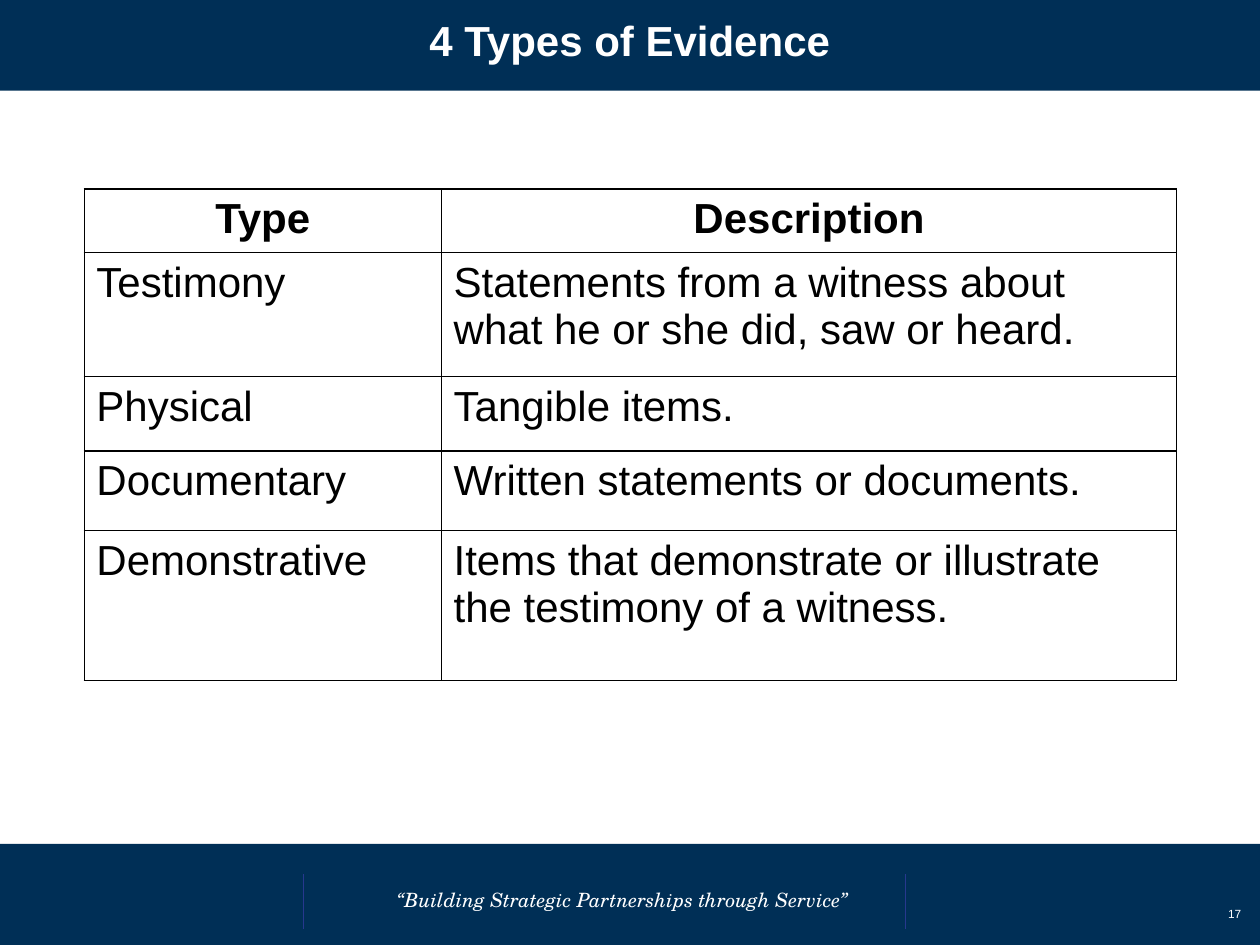
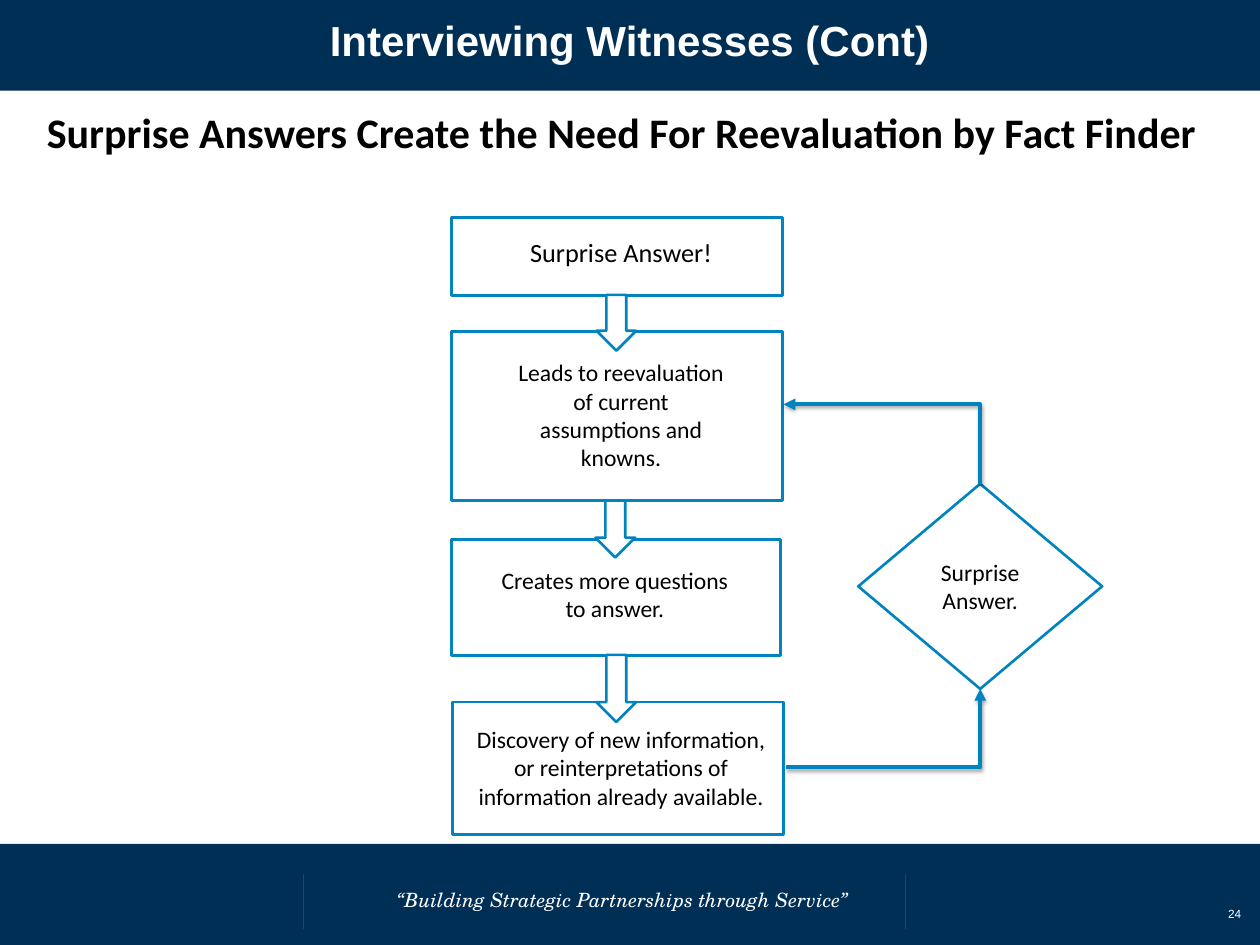
from dataclasses import dataclass

from lxml import etree
from pptx import Presentation
from pptx.dml.color import RGBColor
from pptx.enum import shapes, text
from pptx.oxml import ns
from pptx.util import Inches, Pt

KIND = shapes.MSO_SHAPE
LEFT, CENTER, RIGHT = (text.PP_ALIGN.LEFT, text.PP_ALIGN.CENTER,
                       text.PP_ALIGN.RIGHT)
TOP, MIDDLE = text.MSO_ANCHOR.TOP, text.MSO_ANCHOR.MIDDLE


@dataclass(frozen=True)
class Theme:
    navy: str = "002F56"
    rule: str = "27388E"
    blue: str = "0083BE"
    white: str = "FFFFFF"
    black: str = "000000"
    sans: str = "Arial"
    body: str = "Calibri"
    serif: str = "TeX Gyre Schola"
    head: int = 32
    lead: int = 20
    note: int = 18
    motto: int = 15
    tiny: int = 9


def rgb(code):
    return RGBColor.from_string(code)


def sub(parent, tag, **attrs):
    node = etree.SubElement(parent, ns.qn(tag))
    for key, value in attrs.items():
        node.set(key, str(value))
    return node


class Deck:
    """Holds the theme, the presentation and the current slide."""

    def __init__(self, theme):
        self.theme = theme
        self.prs = Presentation()
        self.prs.slide_width, self.prs.slide_height = Inches(13.33), Inches(10)
        self.slide = None

    def page(self, title, number):
        """Start a slide with its bands, title, motto and number."""
        t = self.theme
        self.slide = self.prs.slides.add_slide(self.prs.slide_layouts[6])
        self.shape(KIND.RECTANGLE, (0, 8.93, 13.33, 1.07), t.navy)
        for x in (9.58, 3.21):
            self.line((x, 9.25), (x, 9.83), t.rule, 0.75)
        self.text((4.1, 9.35, 5.2, 0.35),
                  "“Building Strategic Partnerships through Service”",
                  t.motto, t.serif, t.white, LEFT, italic=True)
        band = (0, -0.11, 13.33, 1.07)
        self.shape(KIND.RECTANGLE, band, t.navy)
        self.text(band, title, t.head, t.sans, t.white, bold=True,
                  anchor=MIDDLE)
        self.text((12.67, 9.41, 0.56, 0.53), str(number), t.tiny, t.sans,
                  t.white, RIGHT, anchor=MIDDLE)

    def label(self, frame, words, size, font=None, color=None, align=CENTER,
              bold=False, italic=False):
        frame.word_wrap = True
        par = frame.paragraphs[0]
        par.text, par.alignment = words, align
        face = par.font
        face.size, face.bold, face.italic = Pt(size), bold, italic
        face.name = font or self.theme.body
        face.color.rgb = rgb(color or self.theme.black)

    def text(self, box, words, size, *args, anchor=TOP, **style):
        frame = self.slide.shapes.add_textbox(*map(Inches, box)).text_frame
        frame.vertical_anchor = anchor
        self.label(frame, words, size, *args, **style)

    def shape(self, kind, box, fill, line=None):
        item = self.slide.shapes.add_shape(kind, *map(Inches, box))
        item.shadow.inherit = False
        item.fill.solid()
        item.fill.fore_color.rgb = rgb(fill)
        if line:
            item.line.color.rgb = rgb(line)
            item.line.width = Pt(2)
        else:
            item.line.fill.background()
        return item

    def node(self, kind, box):
        """Add a white flowchart shape with a blue outline."""
        return self.shape(kind, box, self.theme.white, self.theme.blue)

    def line(self, start, end, color, width,
             kind=shapes.MSO_CONNECTOR.STRAIGHT):
        item = self.slide.shapes.add_connector(
            kind, *map(Inches, (*start, *end)))
        item.line.color.rgb = rgb(color)
        item.line.width = Pt(width)
        sub(item._element.spPr, "a:effectLst")
        return item

    def elbow(self, start, end, rise=False):
        """Draw a one-bend arrow; with rise it goes up first, then left."""
        if rise:
            (x1, y1), (x2, y2) = start, end
            wide, high = x1 - x2, y1 - y2
            x, y = (x1 + x2) / 2, (y1 + y2) / 2
            start = x - high / 2, y + wide / 2
            end = x + high / 2, y - wide / 2
        item = self.line(start, end, self.theme.blue, 3,
                         shapes.MSO_CONNECTOR.ELBOW)
        props = item._element.spPr
        props.find(ns.qn("a:prstGeom")).set("prst", "bentConnector2")
        if rise:
            props.find(ns.qn("a:xfrm")).set("rot", str(270 * 60000))
        sub(props.find(ns.qn("a:ln")), "a:tailEnd", type="triangle")
        glow = sub(props.find(ns.qn("a:effectLst")), "a:outerShdw",
                   blurRad=Pt(3.1), dist=Pt(1.8), dir=90 * 60000,
                   rotWithShape=0)
        sub(sub(glow, "a:srgbClr", val=self.theme.black), "a:alpha", val=35000)

    def table(self, spot, cols, rows, data):
        t = self.theme
        size = sum(cols), sum(rows)
        grid = self.slide.shapes.add_table(
            len(rows), len(cols), *map(Inches, (*spot, *size))).table
        for col, wide in zip(grid.columns, cols):
            col.width = Inches(wide)
        for i, (row, high) in enumerate(zip(grid.rows, rows)):
            row.height = Inches(high)
            for cell, words in zip(row.cells, data[i]):
                cell.margin_left = cell.margin_right = Inches(0.13)
                cell.margin_top = cell.margin_bottom = Inches(0.07)
                for side in "LRTB":
                    edge = sub(cell._tc.get_or_add_tcPr(), f"a:ln{side}",
                               w=Pt(1))
                    sub(sub(edge, "a:solidFill"), "a:srgbClr", val=t.black)
                cell.fill.solid()
                cell.fill.fore_color.rgb = rgb(t.white)
                self.label(cell.text_frame, words, t.head, t.sans,
                           align=LEFT if i else CENTER, bold=i == 0)


def evidence(deck):
    deck.page("4 Types of Evidence", 17)
    deck.table((0.89, 2), (3.78, 7.78), (0.67, 1.31, 0.79, 0.84, 1.59), [
        ("Type", "Description"),
        ("Testimony", "Statements from a witness about what he or she did, "
                      "saw or heard."),
        ("Physical", "Tangible items."),
        ("Documentary", "Written statements or documents."),
        ("Demonstrative", "Items that demonstrate or illustrate the "
                          "testimony of a witness."),
    ])


def witness(deck):
    t = deck.theme
    deck.page("Interviewing Witnesses (Cont)", 24)
    deck.text((0.05, 1.08, 13.06, 0.64),
              "Surprise Answers Create the Need For Reevaluation by Fact "
              "Finder", t.head, bold=True)
    # Back to front: the second step covers the tail of the arrow below it.
    for kind, box in (
            (KIND.RECTANGLE, (4.78, 5.71, 3.48, 1.23)),
            (KIND.DOWN_ARROW, (6.3, 5.27, 0.42, 0.63)),
            (KIND.RECTANGLE, (4.79, 7.43, 3.5, 1.4)),
            (KIND.RECTANGLE, (4.78, 3.51, 3.5, 1.79)),
            (KIND.RECTANGLE, (4.78, 2.3, 3.5, 0.83)),
            (KIND.DOWN_ARROW, (6.31, 3.12, 0.42, 0.59)),
            (KIND.DOWN_ARROW, (6.31, 6.93, 0.42, 0.71))):
        deck.node(kind, box)
    for box, words, size in (
            ((4.86, 2.45, 3.42, 0.44), "Surprise Answer!", t.lead),
            ((5.36, 3.74, 2.42, 1.31),
             "Leads to reevaluation of current assumptions and knowns.",
             t.note),
            ((5.17, 5.94, 2.67, 0.71), "Creates more questions to answer.",
             t.note),
            ((4.82, 7.62, 3.5, 1.01),
             "Discovery of new information, or reinterpretations of "
             "information already available.", t.note)):
        deck.text(box, words, size)
    deck.elbow((8.32, 8.12), (10.37, 7.29))
    choice = deck.node(KIND.DIAMOND, (9.08, 5.12, 2.58, 2.17))
    choice.text_frame.vertical_anchor = MIDDLE
    deck.label(choice.text_frame, "Surprise Answer.", t.note)
    deck.elbow((10.37, 5.12), (8.29, 4.28), rise=True)


def main():
    deck = Deck(Theme())
    evidence(deck)
    witness(deck)
    deck.prs.save("out.pptx")


if __name__ == "__main__":
    main()
